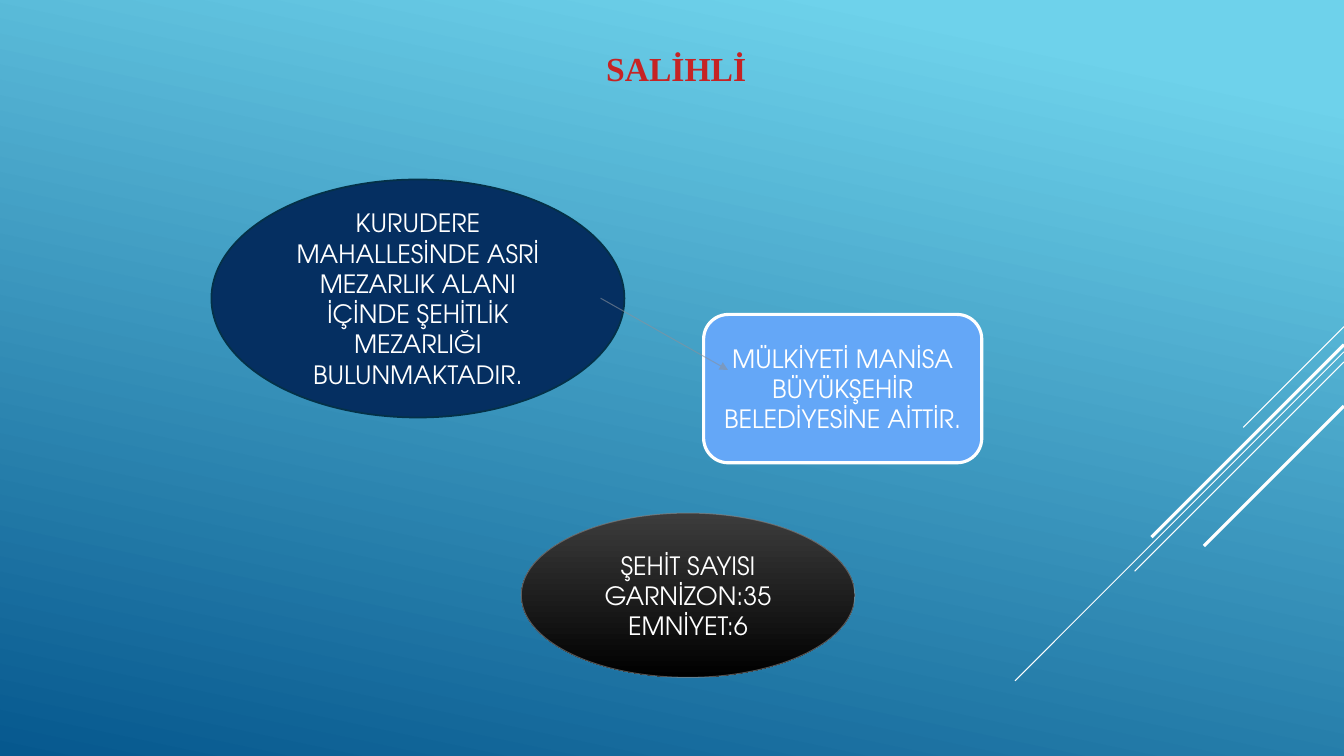
import pptx
import pptx.util
import pptx.dml.color
import pptx.enum.shapes
import pptx.enum.text
import pptx.oxml
import pptx.oxml.ns

COLOURS = {
    "sky": "6ED2EB", "deep": "06588E", "white": "FFFFFF", "red": "C62324",
    "navy": "052F61", "navy_edge": "043148", "blue": "64A7F7",
    "arrow": "89919C", "grey": "898989", "charcoal": "3C3C3C", "black": "000000",
}
TITLE_FONT = {"name": "Times New Roman", "size": pptx.util.Pt(24), "bold": True}
BODY_FONT = {"name": "TeX Gyre Adventor", "size": pptx.util.Pt(18), "bold": False}
SHAPES = pptx.enum.shapes.MSO_SHAPE
ANCHORS = pptx.enum.text.MSO_ANCHOR


class SlidePainter:
    """Draws styled elements on one slide, with lengths in points."""

    def __init__(self, deck):
        self.page = deck.slides.add_slide(deck.slide_layouts[6])

    def colour(self, name):
        return pptx.dml.color.RGBColor.from_string(COLOURS[name])

    def lengths(self, *values):
        return [pptx.util.Pt(value) for value in values]

    def gradient(self, fill, stops, angle):
        fill.gradient()
        fill.gradient_angle = 360 - angle
        for stop, (position, name) in zip(fill.gradient_stops, stops):
            stop.position = position
            stop.color.rgb = self.colour(name)

    def outline(self, line, name, width, opacity=100):
        line.width = pptx.util.Pt(width)
        line.color.rgb = self.colour(name)
        if opacity < 100:
            fill = line.fill._xPr.find(pptx.oxml.ns.qn("a:solidFill"))
            self.add_xml(fill[0], "alpha", f'val="{opacity * 1000}"')

    def add_xml(self, parent, tag, attributes=""):
        parent.append(pptx.oxml.parse_xml(
            f'<a:{tag} {pptx.oxml.ns.nsdecls("a")} {attributes}/>'))

    def add_text(self, shape, lines, name, font, anchor):
        frame = shape.text_frame
        frame.word_wrap = True
        frame.vertical_anchor = anchor
        for index, text in enumerate(lines):
            para = frame.add_paragraph() if index else frame.paragraphs[0]
            para.alignment = pptx.enum.text.PP_ALIGN.CENTER
            span = para.add_run()
            span.text = text
            span.font.color.rgb = self.colour(name)
            for key, value in font.items():
                setattr(span.font, key, value)

    def title(self, place, text):
        box = self.page.shapes.add_textbox(*self.lengths(*place))
        self.add_text(box, [text], "red", TITLE_FONT, ANCHORS.BOTTOM)

    def bubble(self, kind, place, fill, edge, lines):
        shape = self.page.shapes.add_shape(kind, *self.lengths(*place))
        shape.shadow.inherit = False
        if isinstance(fill, str):
            shape.fill.solid()
            shape.fill.fore_color.rgb = self.colour(fill)
        else:
            self.gradient(shape.fill, fill, 90)
        self.outline(shape.line, *edge)
        self.add_text(shape, lines, "white", BODY_FONT, ANCHORS.MIDDLE)

    def line(self, start, end, edge, arrow=False):
        connector = self.page.shapes.add_connector(
            pptx.enum.shapes.MSO_CONNECTOR.STRAIGHT, *self.lengths(*start, *end))
        self.outline(connector.line, *edge)
        if arrow:
            self.add_xml(connector.line.fill._xPr, "tailEnd", 'type="triangle"')
        self.add_xml(connector._element.spPr, "effectLst")


def main():
    deck = pptx.Presentation()
    deck.slide_width, deck.slide_height = pptx.util.Pt(960), pptx.util.Pt(540)
    painter = SlidePainter(deck)
    painter.gradient(painter.page.background.fill, [(0.1, "sky"), (1, "deep")], 102)

    for top, reach, width in [(233.3, 72, 0.75), (251.3, 235, 0.75), (258.5, 149.5, 0.75),
                              (246.2, 137.5, 2.25), (290, 100, 2.25)]:
        painter.line((960, top), (960 - reach, top + reach), ("white", width))

    painter.title((192, 22.3, 582, 44.6), "SALİHLİ")
    painter.bubble(SHAPES.OVAL, (151, 128.2, 295, 170), "navy", ("navy_edge", 1.25),
                   ["KURUDERE MAHALLESİNDE ASRİ MEZARLIK ALANI İÇİNDE ŞEHİTLİK "
                    "MEZARLIĞI BULUNMAKTADIR."])
    painter.bubble(SHAPES.ROUNDED_RECTANGLE, (502.6, 224.6, 198.7, 106), "blue",
                   ("white", 2.25), ["MÜLKİYETİ MANİSA BÜYÜKŞEHİR BELEDİYESİNE AİTTİR."])
    painter.line((429, 213), (520, 264.3), ("arrow", 0.75, 60), arrow=True)
    painter.bubble(SHAPES.OVAL, (372.3, 366.5, 238.3, 117.4),
                   [(0, "charcoal"), (1, "black")], ("grey", 0.75, 60),
                   ["ŞEHİT SAYISI", "GARNİZON:35", "EMNİYET:6"])
    deck.save("out.pptx")


if __name__ == "__main__":
    main()
